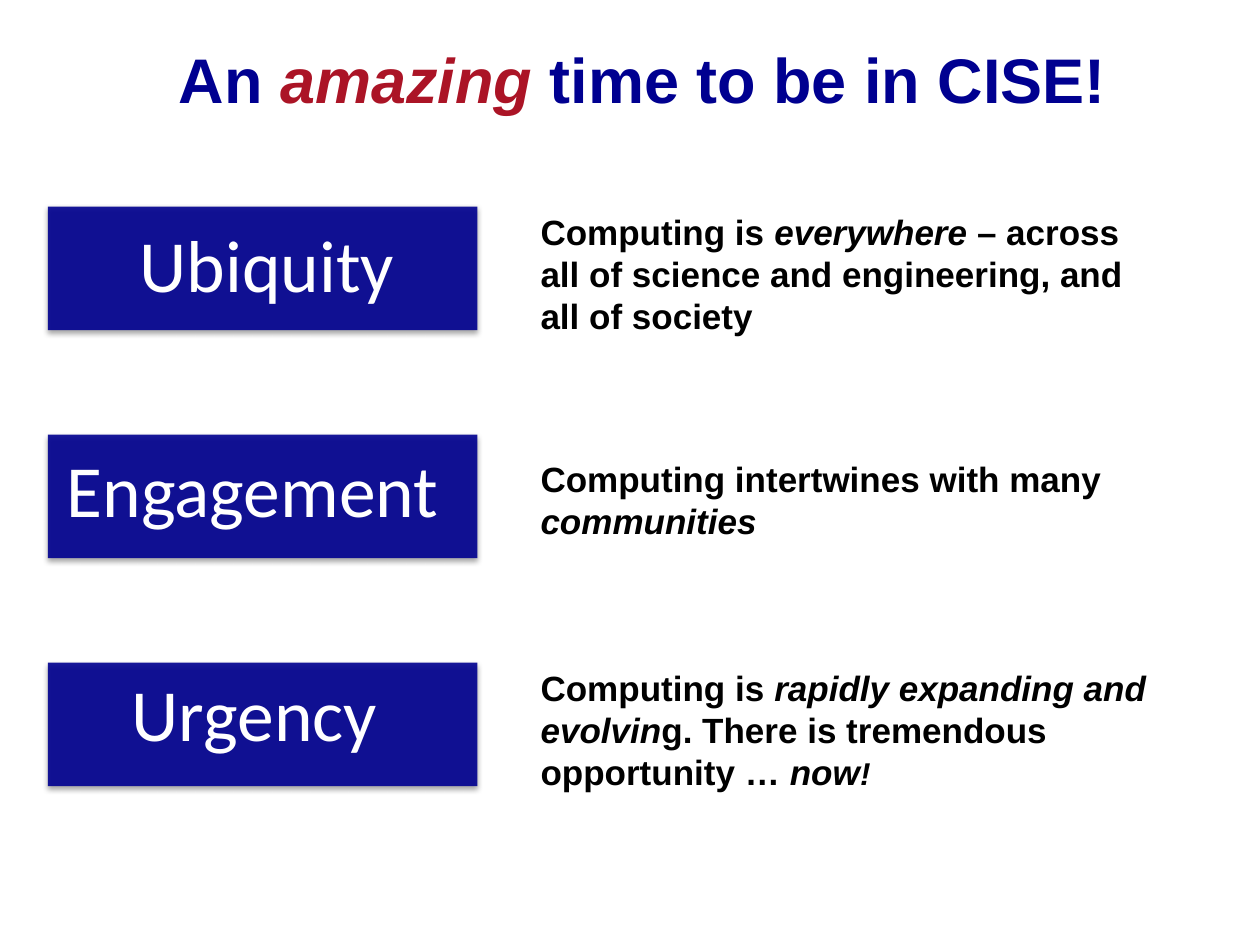
"""Build the slide on ubiquity, engagement and urgency in computing."""
from dataclasses import dataclass
from typing import Optional, Sequence

from lxml.etree import SubElement
from pptx import Presentation
from pptx.dml.color import RGBColor
from pptx.enum.shapes import MSO_SHAPE
from pptx.enum.text import MSO_ANCHOR, PP_ALIGN
from pptx.oxml.ns import qn
from pptx.util import Inches, Pt


@dataclass(frozen=True)
class Theme:
    navy: RGBColor = RGBColor(0x00, 0x00, 0x90)
    crimson: RGBColor = RGBColor(0xAB, 0x14, 0x26)
    white: RGBColor = RGBColor(0xFF, 0xFF, 0xFF)
    black: RGBColor = RGBColor(0x00, 0x00, 0x00)
    heading_font: str = "Arial"
    label_font: str = "Calibri"
    title_size: int = 36
    label_size: int = 42
    body_size: int = 20
    small_size: int = 18


@dataclass(frozen=True)
class Span:
    text: str
    italic: bool = False
    color: Optional[RGBColor] = None
    size: Optional[int] = None


@dataclass(frozen=True)
class Area:
    left: float
    top: float
    width: float
    height: float


@dataclass(frozen=True)
class Row:
    label: str
    label_area: Area
    body: Sequence[Span]
    body_area: Area
    body_indent: float = 0


THEME = Theme()
PANEL_LEFT, PANEL_TOP, PANEL_WIDTH, PANEL_HEIGHT = 0.38, 1.64, 3.41, 0.98
ROW_PITCH = 1.81

TITLE = (
    Span("An "),
    Span("amazing ", italic=True, color=THEME.crimson),
    Span("time to be in CISE!"),
)

ROWS = (
    Row(
        "Ubiquity", Area(0.99, 1.74, 2.26, 0.71),
        (
            Span("Computing is "),
            Span("everywhere", italic=True),
            Span(" – across all of science and engineering, and all of society"),
        ),
        Area(4.22, 1.64, 4.87, 1.08),
    ),
    Row(
        "Engagement", Area(0.38, 3.52, 3.25, 0.71),
        (
            Span("Computing intertwines with many "),
            Span("communities", italic=True),
        ),
        Area(4.22, 3.6, 5.33, 0.74),
    ),
    Row(
        "Urgency", Area(0.89, 5.3, 2.26, 0.71),
        (
            Span("Computing is "),
            Span("rapidly expanding and evolvin", italic=True),
            Span("g. There is tremendous opportunity … "),
            Span("now", italic=True),
            Span("!", italic=True, size=THEME.small_size),
        ),
        Area(3.72, 5.26, 5.52, 1.08),
        body_indent=0.5,
    ),
)


def add_text(page, area: Area, spans: Sequence[Span], *, font: str, size: int,
             color: RGBColor, bold: bool = False, align=PP_ALIGN.LEFT,
             anchor=MSO_ANCHOR.TOP, inset_x: float = 0, inset_y: float = 0,
             indent: float = 0) -> None:
    box = page.shapes.add_textbox(Inches(area.left), Inches(area.top),
                                  Inches(area.width), Inches(area.height))
    frame = box.text_frame
    frame.word_wrap = True
    frame.vertical_anchor = anchor
    frame.margin_left = frame.margin_right = Inches(inset_x)
    frame.margin_top = frame.margin_bottom = Inches(inset_y)
    para = frame.paragraphs[0]
    para.alignment = align
    if indent:
        para._p.get_or_add_pPr().set("marL", str(Inches(indent)))
    for span in spans:
        run = para.add_run()
        run.text = span.text
        run.font.name = font
        run.font.size = Pt(span.size or size)
        run.font.bold = bold
        run.font.italic = span.italic
        run.font.color.rgb = span.color or color


def add_panel(page, top: float) -> None:
    panel = page.shapes.add_shape(MSO_SHAPE.RECTANGLE, Inches(PANEL_LEFT), Inches(top),
                                  Inches(PANEL_WIDTH), Inches(PANEL_HEIGHT))
    panel.fill.solid()
    panel.fill.fore_color.rgb = THEME.navy
    panel.line.fill.background()
    panel.shadow.inherit = False
    properties = panel._element.spPr
    fill_color = properties.find(qn("a:solidFill")).find(qn("a:srgbClr"))
    SubElement(fill_color, qn("a:alpha"), val="90000")
    shadow = SubElement(properties.find(qn("a:effectLst")), qn("a:outerShdw"),
                        blurRad=str(Pt(3.1)), dist=str(Pt(1.6)),
                        dir="5400000", rotWithShape="0")
    shadow_color = SubElement(shadow, qn("a:srgbClr"), val=str(THEME.black))
    SubElement(shadow_color, qn("a:alpha"), val="38000")


def add_row(page, row: Row, top: float) -> None:
    add_panel(page, top)
    add_text(page, row.label_area, [Span(row.label)], font=THEME.label_font,
             size=THEME.label_size, color=THEME.white, align=PP_ALIGN.CENTER)
    add_text(page, row.body_area, row.body, font=THEME.heading_font,
             size=THEME.body_size, color=THEME.black, bold=True,
             inset_x=0.07, inset_y=0.03, indent=row.body_indent)


def main() -> None:
    deck = Presentation()
    deck.slide_width, deck.slide_height = Inches(10), Inches(7.5)
    page = deck.slides.add_slide(deck.slide_layouts[6])
    add_text(page, Area(0.5, 0, 9.2, 1.25), TITLE, font=THEME.heading_font,
             size=THEME.title_size, color=THEME.navy, bold=True,
             align=PP_ALIGN.CENTER, anchor=MSO_ANCHOR.MIDDLE,
             inset_x=0.1, inset_y=0.05)
    for index, row in enumerate(ROWS):
        add_row(page, row, PANEL_TOP + index * ROW_PITCH)
    deck.save("out.pptx")


if __name__ == "__main__":
    main()
